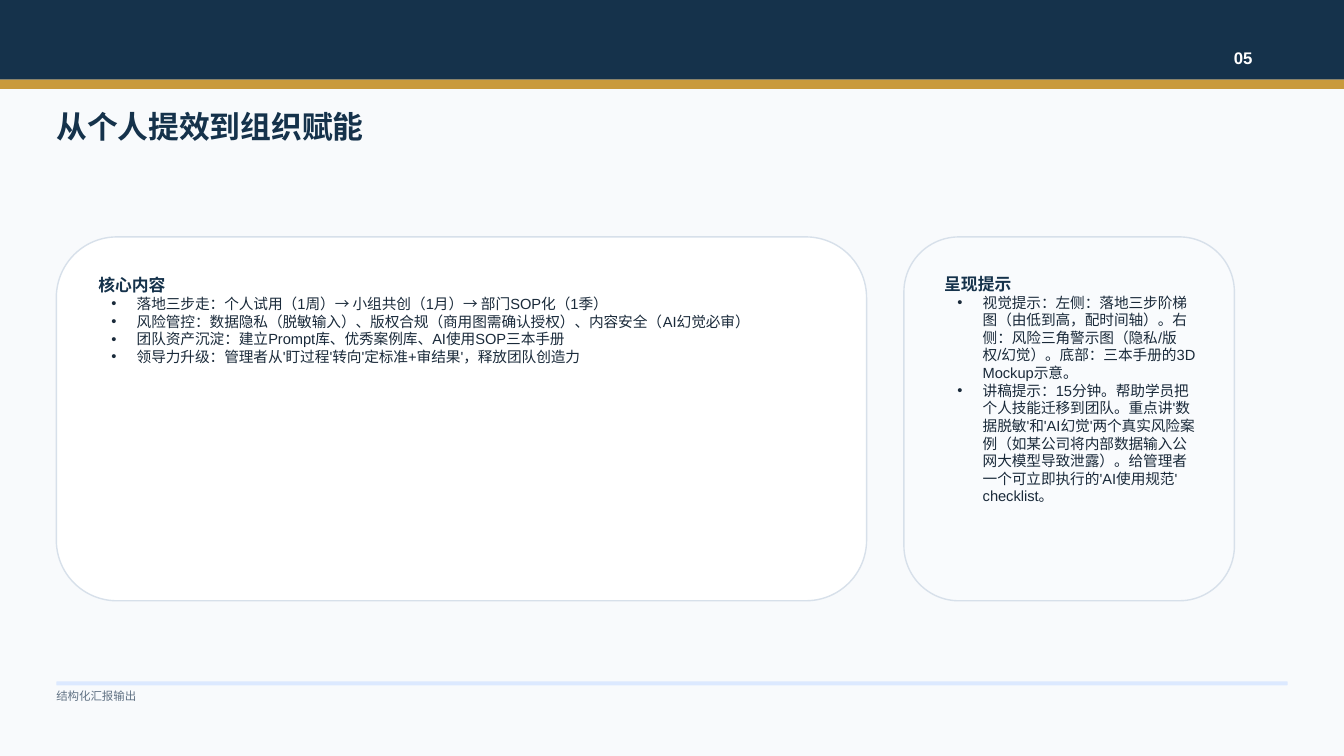
from dataclasses import dataclass

from lxml.etree import SubElement
from pptx import Presentation
from pptx.dml.color import RGBColor
from pptx.enum.shapes import MSO_SHAPE
from pptx.enum.text import MSO_ANCHOR, PP_ALIGN
from pptx.oxml.ns import qn
from pptx.util import Cm, Pt


# Colours and type sizes
@dataclass(frozen=True)
class Theme:
    font: str = "Arial"
    page: str = "F8FAFC"
    navy: str = "15324B"
    gold: str = "C99A3D"
    white: str = "FFFFFF"
    mist: str = "F9FBFD"
    edge: str = "D7E0EA"
    rule: str = "DCE9FF"
    ink: str = "1A2A3A"
    grey: str = "617284"
    title: float = 22
    head: float = 12
    body: float = 10.5
    foot: float = 8.2


THEME = Theme()
WIDE, HIGH = 33.87, 19.05
LEFT = 1.42
BAND, STRIPE = 2.01, 0.23
CARD_TOP, CARD_HIGH = 5.97, 9.17

CORE = [
    "落地三步走：个人试用（1周）→ 小组共创（1月）→ 部门SOP化（1季）",
    "风险管控：数据隐私（脱敏输入）、版权合规（商用图需确认授权）、内容安全（AI幻觉必审）",
    "团队资产沉淀：建立Prompt库、优秀案例库、AI使用SOP三本手册",
    "领导力升级：管理者从'盯过程'转向'定标准+审结果'，释放团队创造力",
]
HINTS = [
    "视觉提示：左侧：落地三步阶梯图（由低到高，配时间轴）。右侧：风险三角警示图"
    "（隐私/版权/幻觉）。底部：三本手册的3D Mockup示意。",
    "讲稿提示：15分钟。帮助学员把个人技能迁移到团队。重点讲'数据脱敏'和'AI幻觉'"
    "两个真实风险案例（如某公司将内部数据输入公网大模型导致泄露）。"
    "给管理者一个可立即执行的'AI使用规范' checklist。",
]


def rgb(code):
    return RGBColor.from_string(code)


def apply(item, values):
    for name, value in values.items():
        setattr(item, name, value)


def frame(shape, pads=(0, 0, 0, 0), anchor=MSO_ANCHOR.TOP):
    sides = ("margin_left", "margin_top", "margin_right", "margin_bottom")
    values = {side: Cm(pad) for side, pad in zip(sides, pads)}
    apply(shape.text_frame, values | {"word_wrap": True, "vertical_anchor": anchor})
    return shape.text_frame


def write(para, text, size, color, bold=False, align=PP_ALIGN.LEFT):
    para.alignment = align
    run = para.add_run()
    run.text = text
    apply(run.font, {"name": THEME.font, "size": Pt(size), "bold": bold})
    run.font.color.rgb = rgb(color)


def bullet(para):
    props = para._p.get_or_add_pPr()
    props.set("marL", str(Cm(0.97)))
    props.set("indent", str(Cm(-0.64)))
    SubElement(props, qn("a:buFont"), typeface=THEME.font)
    SubElement(props, qn("a:buChar"), char="•")


def block(slide, box, fill, kind=MSO_SHAPE.RECTANGLE, edge=None):
    shape = slide.shapes.add_shape(kind, *map(Cm, box))
    shape.shadow.inherit = False
    shape.fill.solid()
    shape.fill.fore_color.rgb = rgb(fill)
    if edge:
        shape.line.color.rgb = rgb(edge)
        shape.line.width = Pt(1)
    else:
        shape.line.fill.background()
    return shape


def label(slide, box, text, size, color, bold=False):
    shape = slide.shapes.add_textbox(*map(Cm, box))
    write(frame(shape).paragraphs[0], text, size, color, bold)


def card(slide, left, width, fill, head, points):
    box = (left, CARD_TOP, width, CARD_HIGH)
    shape = block(slide, box, fill, MSO_SHAPE.ROUNDED_RECTANGLE, THEME.edge)
    body = frame(shape, (0.61, 0.51, 0.56, 0.43))
    write(body.paragraphs[0], head, THEME.head, THEME.navy, True)
    for point in points:
        para = body.add_paragraph()
        bullet(para)
        write(para, point, THEME.body, THEME.ink)


def badge(slide, box, text):
    shape = block(slide, box, THEME.navy, MSO_SHAPE.ROUNDED_RECTANGLE)
    body = frame(shape, (0.08, 0.1, 0.08, 0.08), MSO_ANCHOR.MIDDLE)
    write(body.paragraphs[0], text, THEME.head, THEME.white, True, PP_ALIGN.CENTER)


def main():
    deck = Presentation()
    apply(deck, {"slide_width": Cm(WIDE), "slide_height": Cm(HIGH)})
    slide = deck.slides.add_slide(deck.slide_layouts[6])
    slide.background.fill.solid()
    slide.background.fill.fore_color.rgb = rgb(THEME.page)

    # Header band, page number and title
    block(slide, (0, 0, WIDE, BAND), THEME.navy)
    block(slide, (0, BAND, WIDE, STRIPE), THEME.gold)
    badge(slide, (30.58, 0.99, 1.5, 0.89), "05")
    label(slide, (LEFT, 2.72, 24.71, 2.49), "从个人提效到组织赋能",
          THEME.title, THEME.navy, True)

    # Content cards
    card(slide, LEFT, 20.42, THEME.white, "核心内容", CORE)
    card(slide, 22.78, 8.33, THEME.mist, "呈现提示", HINTS)

    # Footer
    block(slide, (LEFT, 17.17, WIDE - 2 * LEFT, 0.1), THEME.rule,
          MSO_SHAPE.ROUNDED_RECTANGLE)
    label(slide, (LEFT, 17.37, 6.12, 0.51), "结构化汇报输出", THEME.foot, THEME.grey)

    deck.save("out.pptx")


if __name__ == "__main__":
    main()
